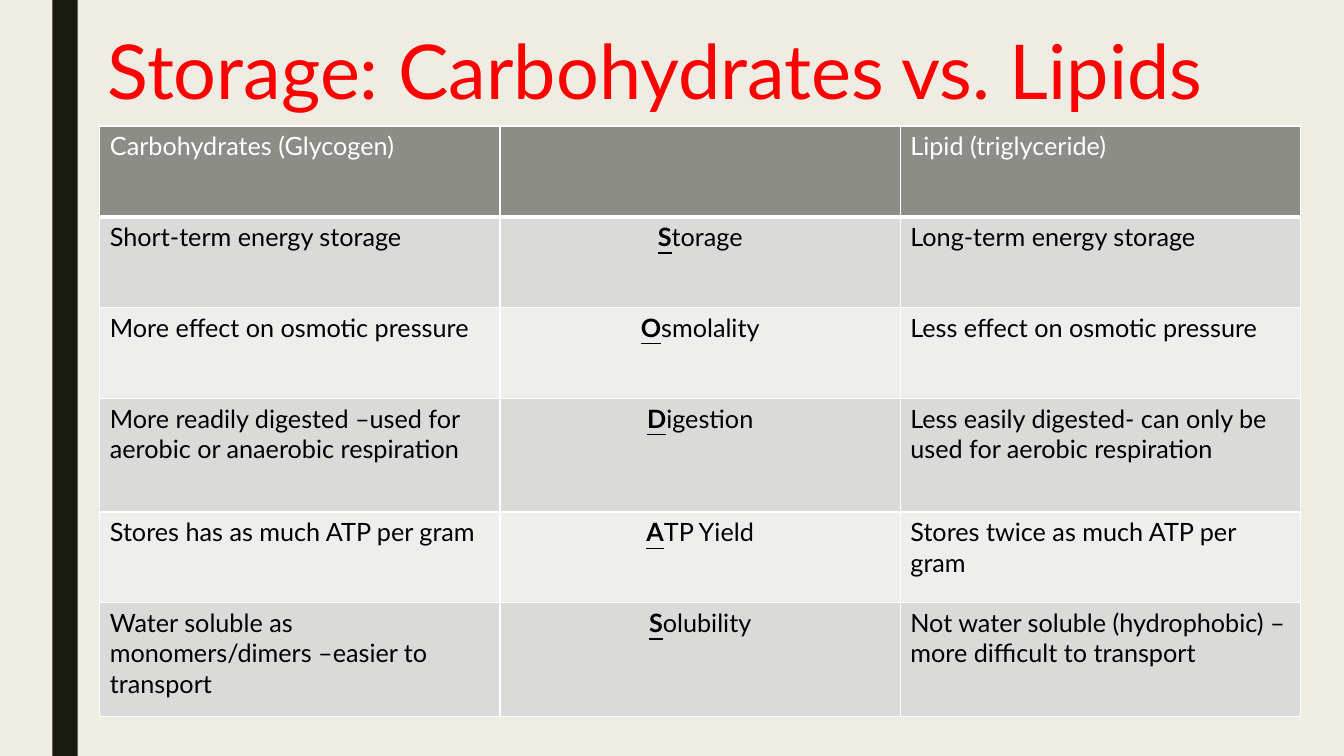
"""Build a slide comparing carbohydrates and lipids as energy stores."""
from lxml.etree import SubElement
from pptx import Presentation
from pptx.dml.color import RGBColor
from pptx.enum.shapes import MSO_SHAPE
from pptx.enum.text import PP_ALIGN
from pptx.oxml.ns import qn
from pptx.util import Inches, Pt

COLORS = {
    "background": "EFEDE3",
    "bar": "191B0E",
    "title": "FF0000",
    "header": "8C8D86",
    "odd_row": "DADBD9",
    "even_row": "EEEEED",
    "white": "FFFFFF",
    "black": "000000",
}
FONT = "Lato"
HEADINGS = ["Carbohydrates (Glycogen)", "", "Lipid (triglyceride)"]
COMPARISONS = [
    ["Short-term energy storage", "Storage", "Long-term energy storage"],
    ["More effect on osmotic pressure", "Osmolality", "Less effect on osmotic pressure"],
    ["More readily digested –used for aerobic or anaerobic respiration", "Digestion",
     "Less easily digested- can only be used for aerobic respiration"],
    ["Stores has as much ATP per gram", "ATP Yield", "Stores twice as much ATP per gram"],
    ["Water soluble as monomers/dimers –easier to transport", "Solubility",
     "Not water soluble (hydrophobic) –more difficult to transport"],
]
ROW_HEIGHTS = [0.9, 0.9, 0.9, 1.13, 0.9, 1.13]
COLUMN_WIDTH = 3.97


def add_span(para, text, size, color, marked=False):
    span = para.add_run()
    span.text = text
    span.font.name = FONT
    span.font.size = Pt(size)
    span.font.bold = marked
    span.font.underline = marked
    span.font.color.rgb = RGBColor.from_string(COLORS[color])


def add_border(cell, side, width):
    line = SubElement(cell._tc.get_or_add_tcPr(), qn(f"a:ln{side}"), w=str(Pt(width)))
    fill = SubElement(line, qn("a:solidFill"))
    SubElement(fill, qn("a:srgbClr"), val=COLORS["white"])


deck = Presentation()
deck.slide_width, deck.slide_height = Inches(13.33), Inches(7.5)
page = deck.slides.add_slide(deck.slide_layouts[6])
page.background.fill.solid()
page.background.fill.fore_color.rgb = RGBColor.from_string(COLORS["background"])

bar = page.shapes.add_shape(MSO_SHAPE.RECTANGLE, Inches(0.52), 0, Inches(0.25), Inches(7.5))
bar.shadow.inherit = False
bar.fill.solid()
bar.fill.fore_color.rgb = RGBColor.from_string(COLORS["bar"])
bar.line.fill.background()

title_box = page.shapes.add_textbox(Inches(0.97), Inches(0.3), Inches(11.9), Inches(1.62))
title_box.text_frame.word_wrap = True
title_para = title_box.text_frame.paragraphs[0]
title_para.line_spacing = 0.89
add_span(title_para, "Storage: Carbohydrates vs. Lipids", 54, "title")

rows = [HEADINGS] + COMPARISONS
table = page.shapes.add_table(
    len(rows), len(HEADINGS), Inches(0.99), Inches(1.25),
    Inches(COLUMN_WIDTH * len(HEADINGS)), Inches(sum(ROW_HEIGHTS)),
).table
for column in table.columns:
    column.width = Inches(COLUMN_WIDTH)

for row_index, texts in enumerate(rows):
    table.rows[row_index].height = Inches(ROW_HEIGHTS[row_index])
    is_header = row_index == 0
    row_fill = "header" if is_header else "odd_row" if row_index % 2 else "even_row"
    text_color = "white" if is_header else "black"
    for column_index, text in enumerate(texts):
        cell = table.cell(row_index, column_index)
        for side in "LRTB":
            add_border(cell, side, 3 if is_header and side == "B" else 1)
        cell.fill.solid()
        cell.fill.fore_color.rgb = RGBColor.from_string(COLORS[row_fill])
        para = cell.text_frame.paragraphs[0]
        if column_index == 1 and text:
            para.alignment = PP_ALIGN.CENTER
            add_span(para, text[0], 18, text_color, marked=True)
            add_span(para, text[1:], 18, text_color)
        elif text:
            add_span(para, text, 18, text_color)

deck.save("out.pptx")
